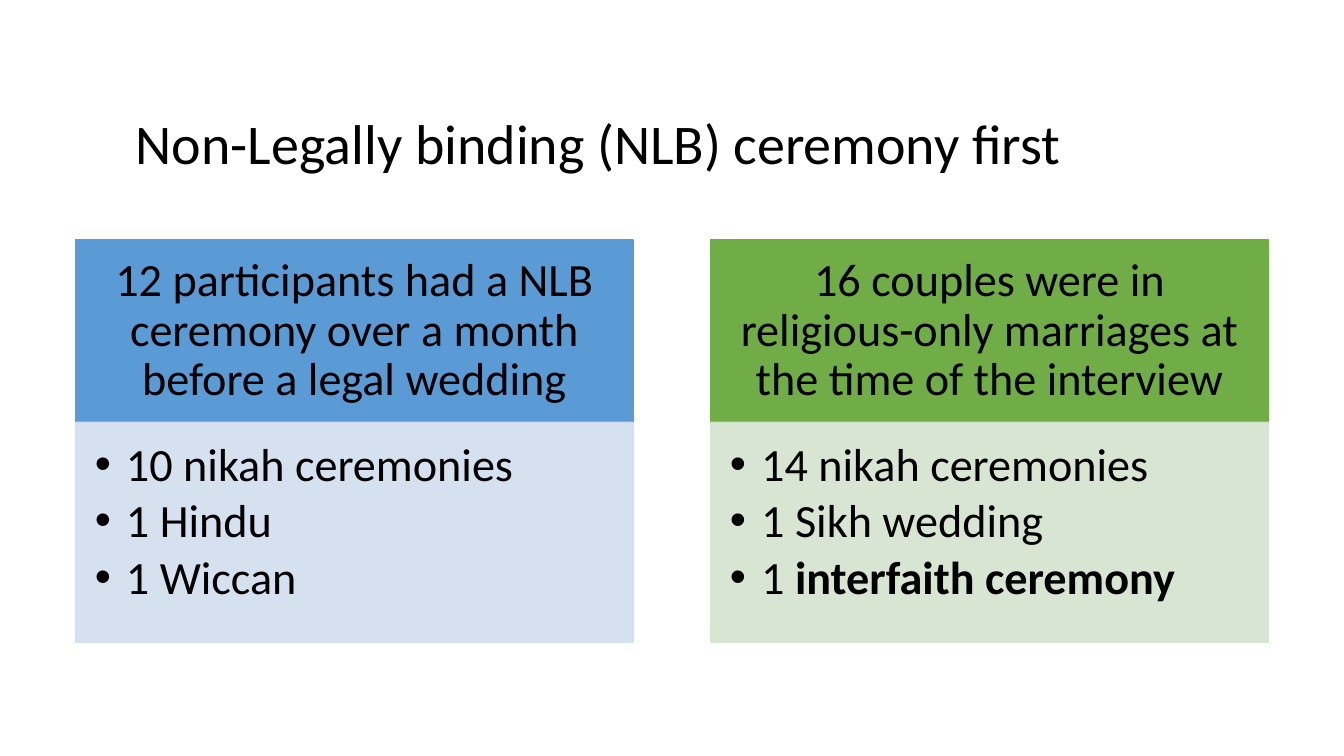
from dataclasses import dataclass

from lxml import etree
from pptx import Presentation
from pptx import util as u
from pptx.dml.color import RGBColor
from pptx.enum import shapes, text
from pptx.oxml.ns import qn


@dataclass(frozen=True)
class Theme:
    font: str = "Calibri"
    ink: str = "000000"
    title_size: int = 40
    body_size: int = 33
    bullet_gap: float = 4.6
    blue: tuple = ("5B9BD5", "D2DEEF")
    green: tuple = ("70AD47", "D5E3CF")


T = Theme()

# Grid in inches: two columns, a heading row above a list row
LEFT, PITCH, WIDTH = 0.75, 6.3, 5.53
TOP, HEAD_H, LIST_H = 2.38, 1.81, 2.18
INDENT = 0.31

COLUMNS = [
    (T.blue, "12 participants had a NLB ceremony over a month before a legal wedding",
     [["10 nikah ceremonies"], ["1 Hindu"], ["1 Wiccan"]]),
    (T.green, "16 couples were in religious-only marriages at the time of the interview",
     [["14 nikah ceremonies"], ["1 Sikh wedding"], ["1 ", "interfaith ceremony"]]),
]


def apply(obj, values):
    for name, value in values.items():
        setattr(obj, name, value)


def set_frame(tf, anchor, insets):
    sides = ("margin_left", "margin_top", "margin_right", "margin_bottom")
    apply(tf, {"word_wrap": True, "vertical_anchor": anchor,
               **{side: u.Inches(v) for side, v in zip(sides, insets)}})


def add_runs(p, words, size):
    """Write the runs of a paragraph; any run after the first is bold."""
    for i, word in enumerate(words):
        r = p.add_run()
        r.text = word
        apply(r.font, {"name": T.font, "size": u.Pt(size), "bold": i > 0})
        r.font.color.rgb = RGBColor.from_string(T.ink)


def add_bullet(p):
    pPr = p._p.get_or_add_pPr()
    pPr.set("marL", str(u.Inches(INDENT)))
    pPr.set("indent", str(-u.Inches(INDENT)))
    etree.SubElement(pPr, qn("a:buFont")).set("typeface", "Arial")
    etree.SubElement(pPr, qn("a:buChar")).set("char", "•")


def add_panel(s, x, y, h, color, alpha=100):
    sp = s.shapes.add_shape(shapes.MSO_SHAPE.RECTANGLE, *map(u.Inches, (x, y, WIDTH, h)))
    sp.shadow.inherit = False
    sp.line.width = u.Pt(1)
    sp.fill.solid()
    for target in (sp.fill.fore_color, sp.line.color):
        target.rgb = RGBColor.from_string(color)
    if alpha < 100:
        for clr in sp._element.spPr.iter(qn("a:srgbClr")):
            etree.SubElement(clr, qn("a:alpha")).set("val", str(alpha * 1000))
    return sp.text_frame


def add_title(s, words):
    tf = s.shapes.add_textbox(*map(u.Inches, (1.25, 1.08, 10.83, 0.75))).text_frame
    set_frame(tf, text.MSO_ANCHOR.MIDDLE, (0.1, 0.05, 0.1, 0.05))
    p = tf.paragraphs[0]
    p.line_spacing = 0.9
    add_runs(p, [words], T.title_size)


def add_heading(s, x, color, words):
    tf = add_panel(s, x, TOP, HEAD_H, color)
    set_frame(tf, text.MSO_ANCHOR.MIDDLE, (0.26, 0.15, 0.26, 0.15))
    p = tf.paragraphs[0]
    apply(p, {"alignment": text.PP_ALIGN.CENTER, "line_spacing": 0.9})
    add_runs(p, [words], T.body_size)


def add_list(s, x, color, items):
    tf = add_panel(s, x, TOP + HEAD_H, LIST_H, color, alpha=90)
    set_frame(tf, text.MSO_ANCHOR.TOP, (0.19, 0.19, 0.26, 0.29))
    for i, words in enumerate(items):
        p = tf.add_paragraph() if i else tf.paragraphs[0]
        add_bullet(p)
        apply(p, {"level": 1, "alignment": text.PP_ALIGN.LEFT, "line_spacing": 0.9,
                  "space_before": u.Pt(0), "space_after": u.Pt(T.bullet_gap)})
        add_runs(p, words, T.body_size)


def main():
    prs = Presentation()
    apply(prs, {"slide_width": u.Inches(13.33), "slide_height": u.Inches(7.5)})
    s = prs.slides.add_slide(prs.slide_layouts[6])

    add_title(s, "Non-Legally binding (NLB) ceremony first")

    # One heading and one list per column
    for i, ((strong, pale), heading, items) in enumerate(COLUMNS):
        x = LEFT + i * PITCH
        add_heading(s, x, strong, heading)
        add_list(s, x, pale, items)

    prs.save("out.pptx")


if __name__ == "__main__":
    main()
